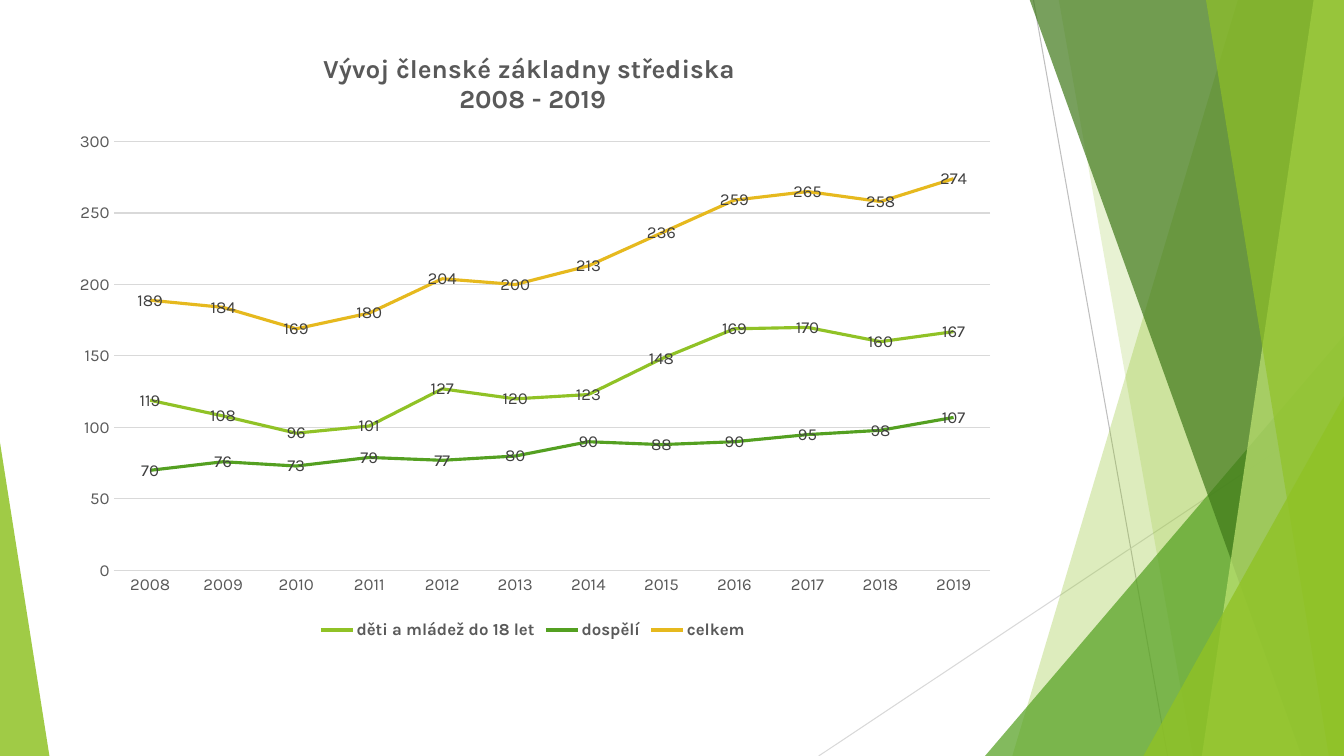
"""Build the slide with the membership line chart and green facet decoration."""
import pptx
import pptx.chart.data
import pptx.dml.color
import pptx.enum.chart
import pptx.enum.shapes
import pptx.oxml
import pptx.oxml.ns
import pptx.util
from pptx.util import Inches

FONT = "Karla"


def color(value):
    return pptx.dml.color.RGBColor.from_string(value)


def paint(sp, value, opacity):
    sp.shadow.inherit = False
    sp.line.fill.background()
    sp.fill.solid()
    sp.fill.fore_color.rgb = color(value)
    clr = sp._element.spPr.find(".//" + pptx.oxml.ns.qn("a:srgbClr"))
    clr.append(pptx.oxml.parse_xml(
        f'<a:alpha {pptx.oxml.ns.nsdecls("a")} val="{opacity * 1000}"/>'))


prs = pptx.Presentation()
prs.slide_width, prs.slide_height = Inches(13.33), Inches(7.5)
s = prs.slides.add_slide(prs.slide_layouts[6])

for x1, y1, x2, y2, value in [
    (10.25, 0, 11.58, 7.5, "BFBFBF"),
    (13.33, 4.03, 8.12, 7.5, "D9D9D9"),
]:
    line = s.shapes.add_connector(
        pptx.enum.shapes.MSO_CONNECTOR.STRAIGHT,
        Inches(x1), Inches(y1), Inches(x2), Inches(y2))
    line.line.color.rgb = color(value)
    line.line.width = pptx.util.Pt(0.75)
    line._element.spPr.append(pptx.oxml.parse_xml(
        f'<a:effectLst {pptx.oxml.ns.nsdecls("a")}/>'))

# facets: top-left x, bottom-left x; triangles: left, top, width, apex
facets = [
    ("band", (12.28, 10.04), "90C226", 30),
    ("band", (10.5, 11.83), "90C226", 20),
    ("triangle", (9.77, 3.33, 3.56, 1), "54A021", 72),
    ("band", (10.21, 12.91), "3F7819", 70),
    ("band", (13.03, 11.92), "C0E474", 70),
    ("band", (11.96, 13.18), "90C226", 65),
    ("triangle", (11.34, 3.93, 1.99, 1), "90C226", 80),
    ("triangle", (0, 4.39, 0.49, 0), "90C226", 85),
]
for kind, geometry, value, opacity in facets:
    if kind == "band":
        top_x, bottom_x = geometry
        fb = s.shapes.build_freeform(Inches(top_x), Inches(-0.01))
        fb.add_line_segments([
            (Inches(13.33), Inches(-0.01)),
            (Inches(13.33), Inches(7.5)),
            (Inches(bottom_x), Inches(7.5)),
        ], close=True)
        sp = fb.convert_to_shape()
    else:
        left, top, width, apex = geometry
        sp = s.shapes.add_shape(
            pptx.enum.shapes.MSO_SHAPE.ISOSCELES_TRIANGLE,
            Inches(left), Inches(top), Inches(width), Inches(7.5 - top))
        sp.adjustments[0] = apex
    paint(sp, value, opacity)

members = [
    ("děti a mládež do 18 let", "90C226",
     (119, 108, 96, 101, 127, 120, 123, 148, 169, 170, 160, 167)),
    ("dospělí", "54A021",
     (70, 76, 73, 79, 77, 80, 90, 88, 90, 95, 98, 107)),
    ("celkem", "E6B91E",
     (189, 184, 169, 180, 204, 200, 213, 236, 259, 265, 258, 274)),
]
data = pptx.chart.data.CategoryChartData()
data.categories = [str(year) for year in range(2008, 2020)]
for name, value, counts in members:
    data.add_series(name, counts)
chart = s.shapes.add_chart(
    pptx.enum.chart.XL_CHART_TYPE.LINE,
    Inches(0.56), Inches(0.31), Inches(9.45), Inches(6.08), data).chart
chart.font.name = FONT
chart.font.size = pptx.util.Pt(12)
chart.font.color.rgb = color("595959")

tf = chart.chart_title.text_frame
tf.text = "Vývoj členské základny střediska \n2008 - 2019"
for p in tf.paragraphs:
    p.font.name = FONT
    p.font.size = pptx.util.Pt(18.6)
    p.font.bold = True
    p.font.color.rgb = color("595959")
chart.chart_title.include_in_layout = False

chart.has_legend = True
chart.legend.position = pptx.enum.chart.XL_LEGEND_POSITION.BOTTOM
chart.legend.include_in_layout = False
chart.legend.font.name = FONT
chart.legend.font.size = pptx.util.Pt(12)
chart.legend.font.bold = True
chart.legend.font.color.rgb = color("595959")

years, counts_axis = chart.category_axis, chart.value_axis
for axis in (years, counts_axis):
    axis.major_tick_mark = pptx.enum.chart.XL_TICK_MARK.NONE
    axis.minor_tick_mark = pptx.enum.chart.XL_TICK_MARK.NONE
counts_axis.minimum_scale, counts_axis.maximum_scale = 0, 300
counts_axis.major_unit = 50
counts_axis.format.line.fill.background()
for rule in (years.format.line, counts_axis.major_gridlines.format.line):
    rule.color.rgb = color("D9D9D9")
    rule.width = pptx.util.Pt(0.75)

chart.plots[0].vary_by_categories = False
for ser, (name, value, counts) in zip(chart.plots[0].series, members):
    ser.smooth = False
    ser.marker.style = pptx.enum.chart.XL_MARKER_STYLE.NONE
    ser.format.line.color.rgb = color(value)
    ser.format.line.width = pptx.util.Pt(2.25)
    labels = ser.data_labels
    labels.show_value = True
    labels.position = pptx.enum.chart.XL_LABEL_POSITION.CENTER
    labels.font.name = FONT
    labels.font.size = pptx.util.Pt(12)
    labels.font.color.rgb = color("404040")

plot_area = chart._chartSpace.chart.plotArea
for layout in plot_area.findall(pptx.oxml.ns.qn("c:layout")):
    plot_area.remove(layout)
plot_area.insert(0, pptx.oxml.parse_xml(
    f'<c:layout {pptx.oxml.ns.nsdecls("c")}><c:manualLayout>'
    '<c:layoutTarget val="inner"/><c:xMode val="edge"/><c:yMode val="edge"/>'
    '<c:x val="0.06"/><c:y val="0.18"/><c:w val="0.92"/><c:h val="0.7"/>'
    '</c:manualLayout></c:layout>'))

prs.save("out.pptx")
